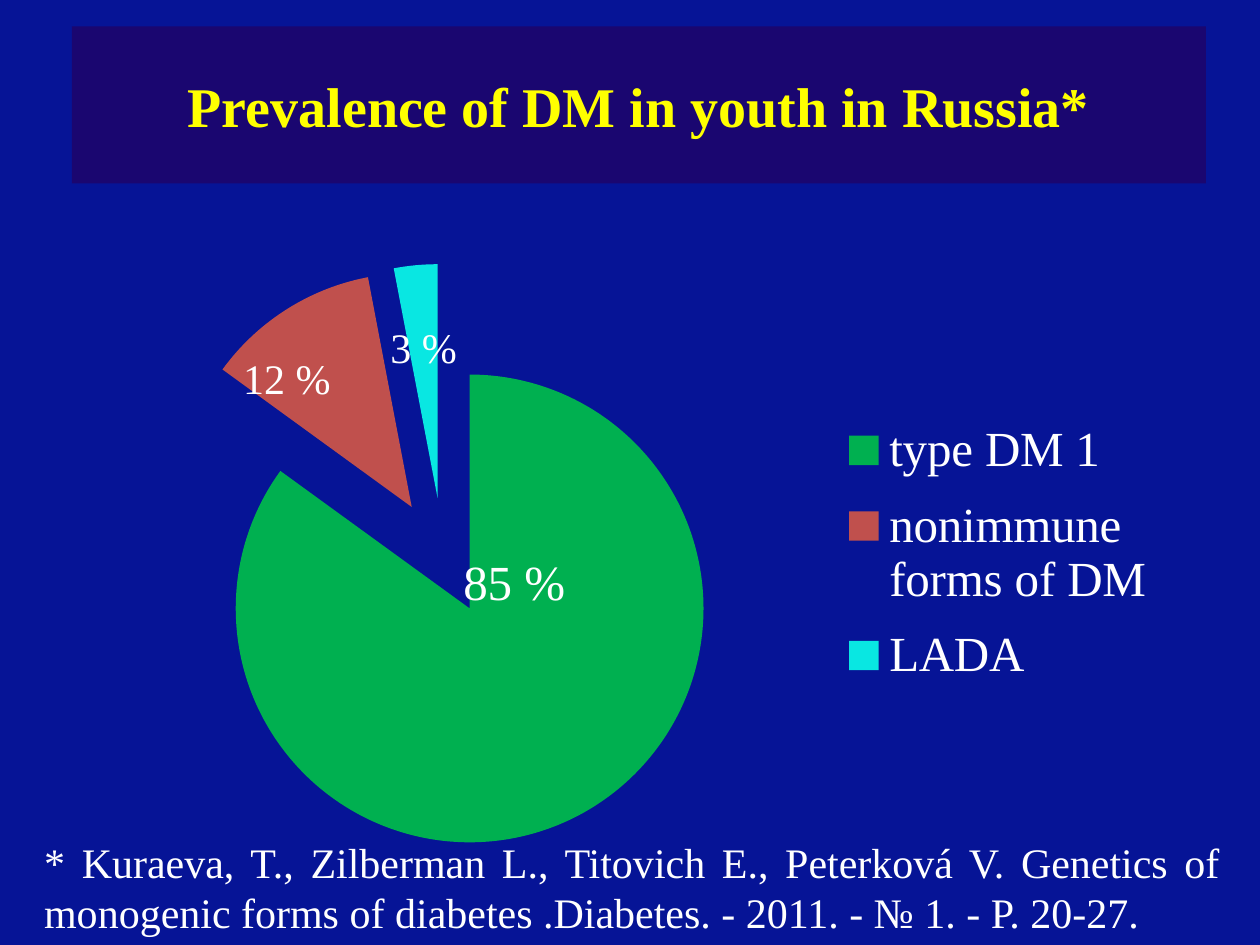
from dataclasses import dataclass

from lxml import etree
from pptx import Presentation
from pptx.chart.data import CategoryChartData
from pptx.dml.color import RGBColor
from pptx.enum.chart import XL_CHART_TYPE, XL_LEGEND_POSITION
from pptx.enum.text import MSO_ANCHOR, MSO_AUTO_SIZE, PP_ALIGN
from pptx.oxml.ns import qn
from pptx.util import Cm, Pt

PIE = XL_CHART_TYPE.PIE
RIGHT = XL_LEGEND_POSITION.RIGHT
MIDDLE = MSO_ANCHOR.MIDDLE
FIT = MSO_AUTO_SIZE.SHAPE_TO_FIT_TEXT
LEFT, CENTER, JUSTIFY = PP_ALIGN.LEFT, PP_ALIGN.CENTER, PP_ALIGN.JUSTIFY


@dataclass(frozen=True)
class Theme:
    font: str = "Times New Roman"
    back: str = "061496"
    band: str = "1A0670"
    head: str = "FFFF00"
    text: str = "FFFFFF"
    slices: tuple = ("00B050", "C0504D", "09E7E2")
    title: int = 32
    large: int = 28
    small: int = 24


def paint(fill, color):
    fill.solid()
    fill.fore_color.rgb = RGBColor.from_string(color)


def place(part, index, **edges):
    """Give a chart part a manual layout, in fractions of the chart."""
    for old in part.findall(qn("c:layout")):
        part.remove(old)
    layout = etree.Element(qn("c:layout"))
    part.insert(index, layout)
    manual = etree.SubElement(layout, qn("c:manualLayout"))
    if part.tag == qn("c:plotArea"):
        etree.SubElement(manual, qn("c:layoutTarget"), val="inner")
    for mode in ("xMode", "yMode"):
        etree.SubElement(manual, qn(f"c:{mode}"), val="edge")
    for name, value in edges.items():
        etree.SubElement(manual, qn(f"c:{name}"), val=str(value))


class Deck:
    def __init__(self, theme):
        self.theme = theme
        self.file = Presentation()
        self.file.slide_width, self.file.slide_height = Cm(25.4), Cm(19.05)
        self.slide = self.file.slides.add_slide(self.file.slide_layouts[5])
        paint(self.slide.background.fill, theme.back)

    def style(self, font, size, color=None, bold=False):
        font.name, font.size, font.bold = self.theme.font, Pt(size), bold
        font.color.rgb = RGBColor.from_string(color or self.theme.text)

    def title(self, text, left, top, width, height):
        shape = self.slide.shapes.title
        shape.left, shape.top = Cm(left), Cm(top)
        shape.width, shape.height = Cm(width), Cm(height)
        paint(shape.fill, self.theme.band)
        frame = shape.text_frame
        frame.text, frame.vertical_anchor = text, MIDDLE
        line = frame.paragraphs[0]
        line.alignment = CENTER
        self.style(line.font, self.theme.title, self.theme.head, True)

    def text(self, text, size, left, top, width, height, align=LEFT, wrap=False):
        box = self.slide.shapes.add_textbox(Cm(left), Cm(top), Cm(width), Cm(height))
        frame = box.text_frame
        frame.text, frame.word_wrap, frame.auto_size = text, wrap, FIT
        line = frame.paragraphs[0]
        line.alignment = align
        self.style(line.font, size)

    def pie(self, shares, burst, left, top, width, height):
        """Add a pie whose slices all move out by burst percent."""
        data = CategoryChartData()
        data.categories = list(shares)
        data.add_series("Series 1", list(shares.values()))
        chart = self.slide.shapes.add_chart(
            PIE, Cm(left), Cm(top), Cm(width), Cm(height), data).chart
        chart.has_title = False
        self.style(chart.font, self.theme.large)

        points = chart.plots[0].series[0].points
        for i, color in enumerate(self.theme.slices):
            paint(points[i].format.fill, color)
        first = chart.element.xpath(".//c:dPt")[0]
        first.addprevious(etree.Element(qn("c:explosion"), val=str(burst)))

        chart.has_legend = True
        legend = chart.legend
        legend.position, legend.include_in_layout = RIGHT, False
        self.style(legend.font, self.theme.large)
        place(chart.element.xpath(".//c:plotArea")[0], 0, x=0.01, y=0.14, w=0.7, h=0.85)
        place(chart.element.xpath(".//c:legend")[0], 1, x=0.7, y=0.34, w=0.29, h=0.44)


def main():
    theme = Theme()
    deck = Deck(theme)
    shares = {"type DM 1": 85, "nonimmune forms of DM": 12, "LADA": 3}
    deck.pie(shares, 25, 0.64, 3.38, 23.04, 13.87)
    deck.title("Prevalence of DM in youth in Russia*", 1.45, 0.53, 22.86, 3.17)

    labels = [
        (theme.large, 9.09, 11, 2.59, 1.45),
        (theme.small, 4.65, 6.99, 2.29, 1.27),
        (theme.small, 7.62, 6.35, 1.85, 1.27),
    ]
    for share, label in zip(shares.values(), labels):
        deck.text(f"{share} %", *label)

    deck.text("* Kuraeva, T., Zilberman L., Titovich E., Peterková V. Genetics of "
              "monogenic forms of diabetes .Diabetes. - 2011. - № 1. - P. 20-27.",
              theme.small, 0.64, 16.74, 24.21, 2.31, JUSTIFY, True)
    deck.file.save("out.pptx")


if __name__ == "__main__":
    main()
